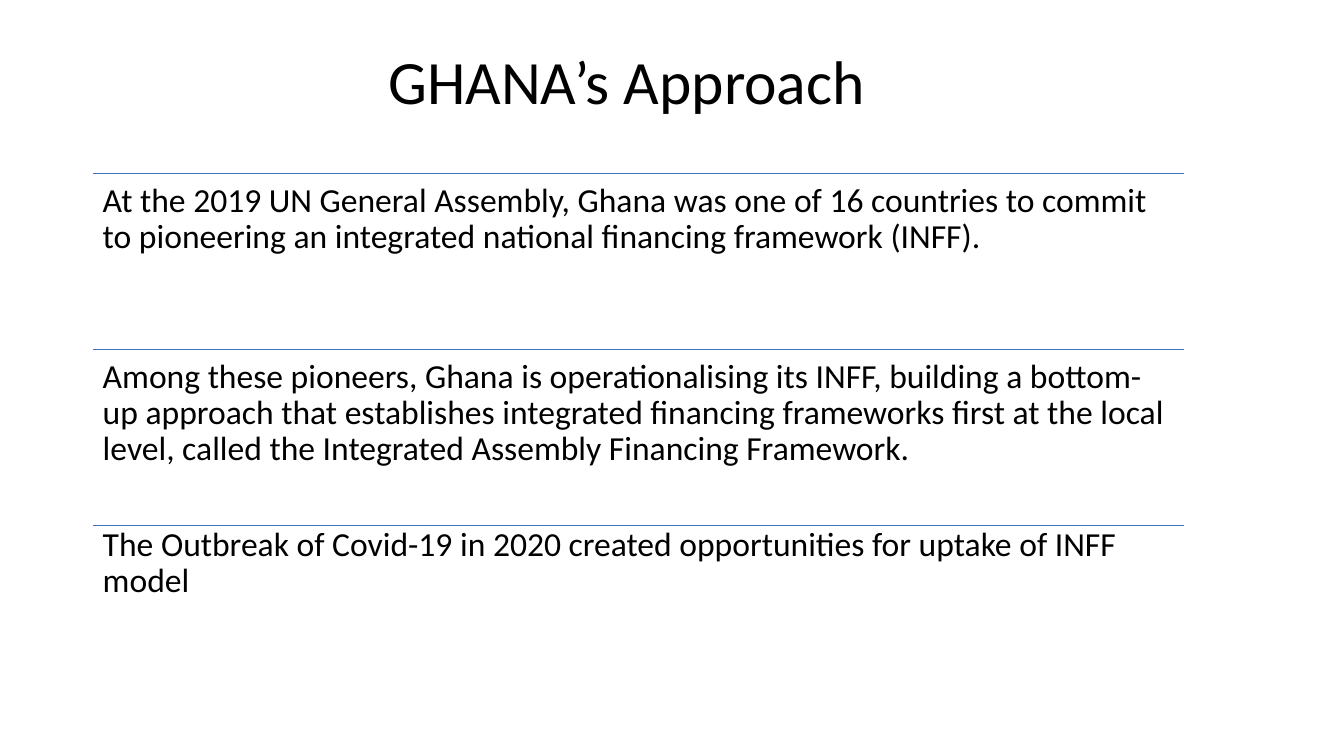
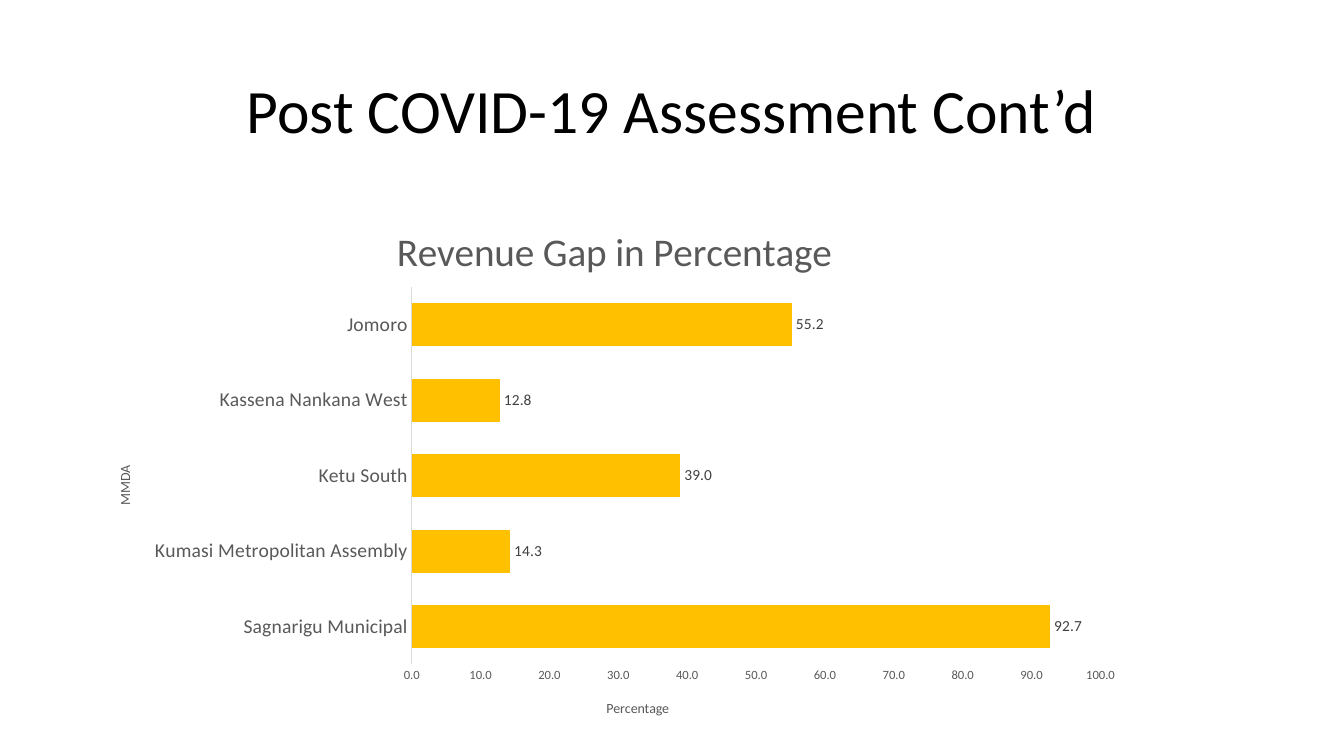
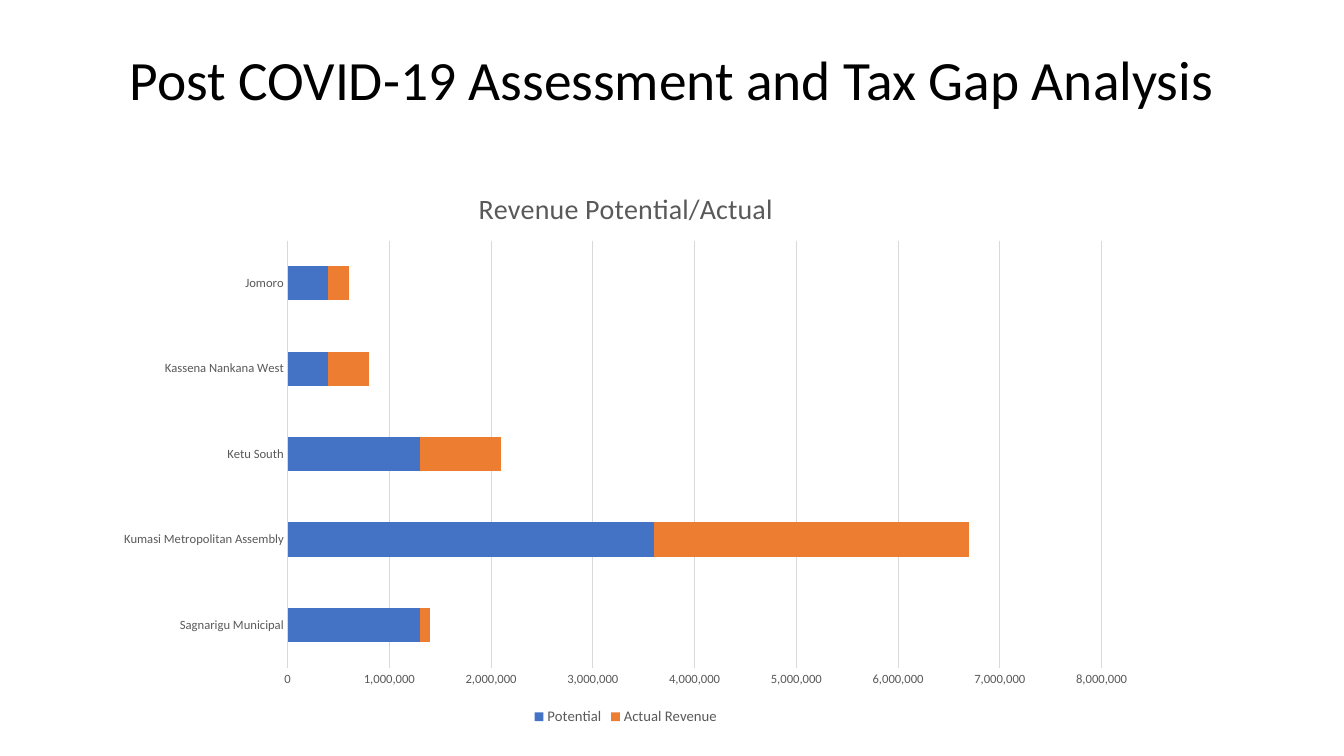
from dataclasses import dataclass
from typing import NamedTuple

from lxml.etree import SubElement
from pptx import Presentation
from pptx.chart.data import CategoryChartData
from pptx.dml.color import RGBColor
from pptx.enum.chart import XL_CHART_TYPE, XL_LABEL_POSITION, XL_LEGEND_POSITION, XL_TICK_MARK
from pptx.enum.shapes import MSO_CONNECTOR
from pptx.enum.text import MSO_ANCHOR, PP_ALIGN
from pptx.oxml.ns import qn
from pptx.util import Cm, Pt


@dataclass(frozen=True)
class Theme:
    font: str = "Calibri"
    text: str = "000000"
    muted: str = "595959"
    label: str = "404040"
    grid: str = "D9D9D9"
    blue: str = "4472C4"
    orange: str = "ED7D31"
    gold: str = "FFC000"
    title_size: float = 44
    long_title_size: float = 39.6
    body_size: float = 24
    axis_size: float = 9
    axis_title_size: float = 10
    legend_size: float = 10.5
    label_size: float = 11
    hairline: float = 0.75
    rule: float = 1
    line_spacing: float = 0.9


class Box(NamedTuple):
    """A region of a slide, in centimetres."""
    left: float
    top: float
    width: float
    height: float

    def lengths(self):
        return [Cm(v) for v in self]


THEME = Theme()
ASSEMBLIES = ["Sagnarigu Municipal", "Kumasi Metropolitan Assembly", "Ketu South",
              "Kassena Nankana West", "Jomoro"]
STATEMENTS = [
    "At the 2019 UN General Assembly, Ghana was one of 16 countries to commit to "
    "pioneering an integrated national financing framework (INFF).",
    "Among these pioneers, Ghana is operationalising its INFF, building a bottom-up "
    "approach that establishes integrated financing frameworks first at the local level, "
    "called the Integrated Assembly Financing Framework.",
    "The Outbreak of Covid-19 in 2020 created opportunities for uptake of INFF model",
]


def style_font(font, size, color):
    font.name = THEME.font
    font.size = Pt(size)
    font.color.rgb = RGBColor.from_string(color)


def add_text(s, box, text, size, inset=0.25, align=PP_ALIGN.LEFT, anchor=MSO_ANCHOR.TOP):
    tf = s.shapes.add_textbox(*box.lengths()).text_frame
    tf.word_wrap = True
    tf.vertical_anchor = anchor
    tf.margin_left = tf.margin_right = Cm(0.25)
    tf.margin_top = tf.margin_bottom = Cm(inset)
    p = tf.paragraphs[0]
    p.text = text
    p.alignment = align
    p.line_spacing = THEME.line_spacing
    style_font(p.font, size, THEME.text)


def add_title(s, box, text, size=THEME.title_size):
    add_text(s, box, text, size, 0.13, PP_ALIGN.CENTER, MSO_ANCHOR.MIDDLE)


def add_rule(s, left, top, width):
    line = s.shapes.add_connector(MSO_CONNECTOR.STRAIGHT, Cm(left), Cm(top),
                                  Cm(left + width), Cm(top))
    line.line.color.rgb = RGBColor.from_string(THEME.blue)
    line.line.width = Pt(THEME.rule)
    SubElement(line._element.spPr, qn("a:effectLst"))


def add_statements(s, box, statements, insets):
    """Stack the statements in equal rows, each under a rule."""
    row_height = box.height / len(statements)
    for i, (text, inset) in enumerate(zip(statements, insets)):
        row = Box(box.left, box.top + i * row_height, box.width, row_height)
        add_rule(s, row.left, row.top, row.width)
        add_text(s, row, text, THEME.body_size, inset)


def set_layout(parent, index, **fractions):
    """Fix a chart part at fractions of the chart; index is the place of c:layout."""
    for old in parent.findall(qn("c:layout")):
        parent.remove(old)
    layout = SubElement(parent, qn("c:layout"))
    parent.insert(index, layout)
    manual = SubElement(layout, qn("c:manualLayout"))
    if "w" in fractions:
        SubElement(manual, qn("c:layoutTarget")).set("val", "inner")
    for side in ("x", "y"):
        SubElement(manual, qn(f"c:{side}Mode")).set("val", "edge")
    for name, value in fractions.items():
        SubElement(manual, qn(f"c:{name}")).set("val", str(value))


def set_chart_title(owner_frame, text, size):
    p = owner_frame.paragraphs[0]
    p.text = text
    style_font(p.font, size, THEME.muted)
    p.font.bold = False


def style_axis(axis, size):
    axis.major_tick_mark = axis.minor_tick_mark = XL_TICK_MARK.NONE
    style_font(axis.tick_labels.font, size, THEME.muted)
    axis.has_major_gridlines = False


def style_hairline(line):
    line.color.rgb = RGBColor.from_string(THEME.grid)
    line.width = Pt(THEME.hairline)


def add_bar_chart(s, box, kind, title, title_size, series, number_format, maximum, step,
                  gap, plot_area, category_size=THEME.axis_size):
    """Add horizontal bars; series holds (name, values, colour)."""
    data = CategoryChartData(number_format=number_format)
    data.categories = ASSEMBLIES
    for name, values, _ in series:
        data.add_series(name, values)
    chart = s.shapes.add_chart(kind, *box.lengths(), data).chart
    style_font(chart.font, THEME.axis_title_size, THEME.text)
    chart.has_legend = False
    chart.has_title = True
    set_chart_title(chart.chart_title.text_frame, title, title_size)
    chart.chart_title.include_in_layout = False

    style_axis(chart.category_axis, category_size)
    style_hairline(chart.category_axis.format.line)
    values_axis = chart.value_axis
    style_axis(values_axis, THEME.axis_size)
    values_axis.format.line.fill.background()
    values_axis.minimum_scale, values_axis.maximum_scale = 0, maximum
    values_axis.major_unit = step
    values_axis.tick_labels.number_format = number_format
    values_axis.tick_labels.number_format_is_linked = False

    plot = chart.plots[0]
    plot.gap_width = gap
    plot.vary_by_categories = False
    for bars, (_, _, color) in zip(plot.series, series):
        bars.format.fill.solid()
        bars.format.fill.fore_color.rgb = RGBColor.from_string(color)
    set_layout(chart._chartSpace.chart.plotArea, 0, **plot_area)
    return chart


def add_axis_title(axis, text, x, y):
    axis.has_title = True
    set_chart_title(axis.axis_title.text_frame, text, THEME.axis_title_size)
    set_layout(axis.axis_title._element, 1, x=x, y=y)


def add_gap_chart(s, box):
    chart = add_bar_chart(
        s, box, XL_CHART_TYPE.BAR_CLUSTERED, "Revenue Gap in Percentage", 28,
        [("Series 1", [92.7, 14.3, 39, 12.8, 55.2], THEME.gold)],
        "0.0", 100, 10, 75, dict(x=0.306, y=0.159, w=0.66, h=0.71), 14)
    add_axis_title(chart.category_axis, "MMDA", 0.02, 0.49)
    add_axis_title(chart.value_axis, "Percentage", 0.49, 0.93)
    plot = chart.plots[0]
    plot.has_data_labels = True
    labels = plot.data_labels
    labels.show_value = True
    labels.position = XL_LABEL_POSITION.OUTSIDE_END
    labels.number_format = "0.0"
    labels.number_format_is_linked = False
    style_font(labels.font, THEME.label_size, THEME.label)


def add_revenue_chart(s, box):
    chart = add_bar_chart(
        s, box, XL_CHART_TYPE.BAR_STACKED, "Revenue Potential/Actual", 20,
        [("Potential", [1300000, 3600000, 1300000, 400000, 400000], THEME.blue),
         ("Actual Revenue", [100000, 3100000, 800000, 400000, 200000], THEME.orange)],
        "#,##0", 8000000, 1000000, 150, dict(x=0.176, y=0.13, w=0.78, h=0.76))
    chart.plots[0].overlap = 100
    chart.value_axis.has_major_gridlines = True
    style_hairline(chart.value_axis.major_gridlines.format.line)
    chart.has_legend = True
    chart.legend.position = XL_LEGEND_POSITION.BOTTOM
    chart.legend.include_in_layout = False
    style_font(chart.legend.font, THEME.legend_size, THEME.muted)


def main():
    prs = Presentation()
    prs.slide_width, prs.slide_height = Cm(33.87), Cm(19.05)
    approach, gap, revenue = [prs.slides.add_slide(prs.slide_layouts[6]) for _ in range(3)]

    add_title(approach, Box(1.2, 1, 29.2, 2.25), "GHANA’s Approach")
    add_statements(approach, Box(2.34, 4.37, 27.5, 13.3), STATEMENTS, [0.25, 0.25, 0.05])

    add_title(gap, Box(2.33, 1.01, 29.2, 3.68), "Post COVID-19 Assessment Cont’d")
    add_gap_chart(gap, Box(2.33, 5.1, 26.3, 13.4))

    add_title(revenue, Box(2.33, 1.01, 29.2, 2.15),
              "Post COVID-19 Assessment and Tax Gap Analysis", THEME.long_title_size)
    add_revenue_chart(revenue, Box(2.62, 4.22, 26.3, 14.17))
    prs.save("out.pptx")


if __name__ == "__main__":
    main()
